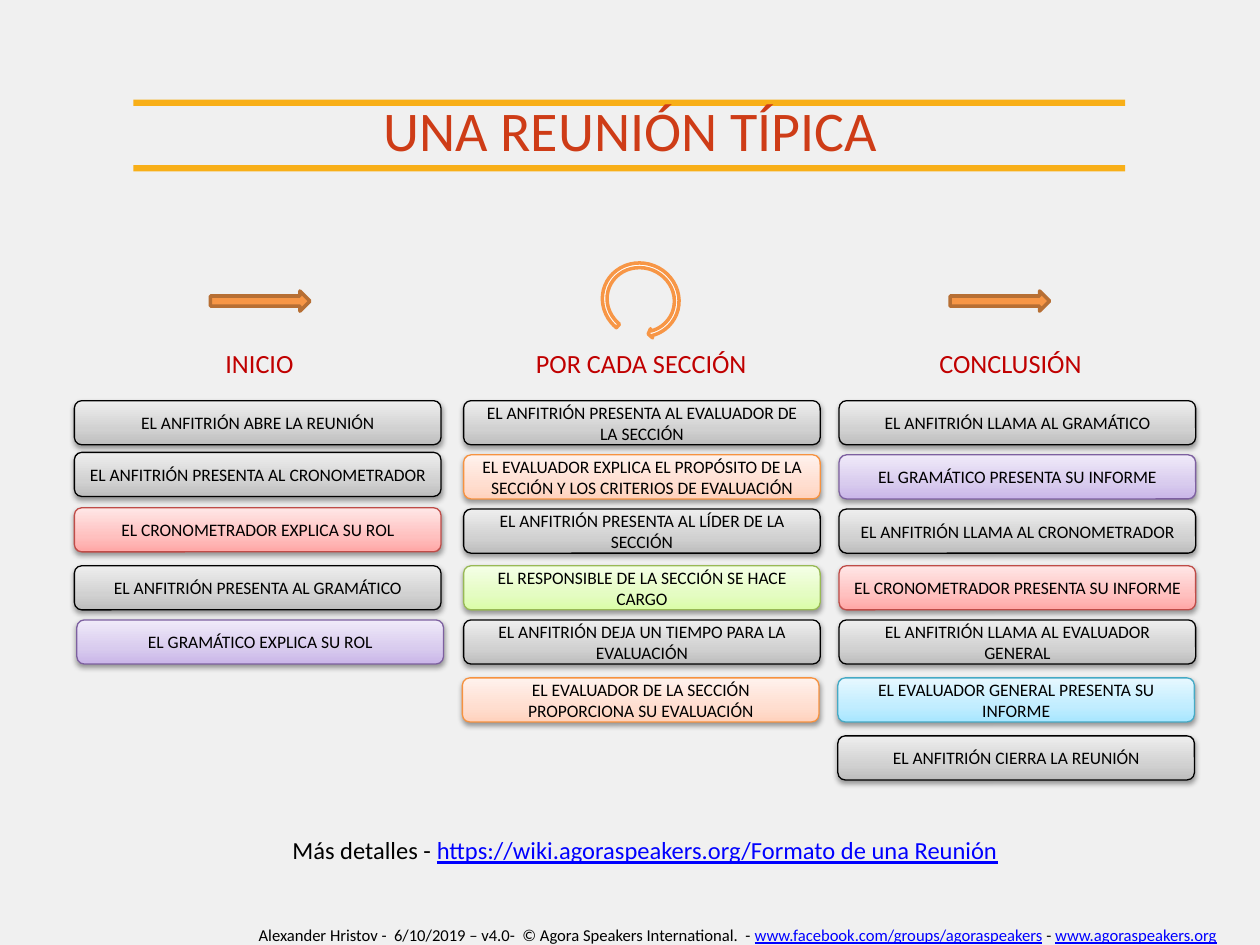
from pptx import Presentation
from pptx.dml.color import RGBColor
from pptx.enum.shapes import MSO_SHAPE as Shape
from pptx.enum.text import MSO_ANCHOR as Anchor, PP_ALIGN as Align
from pptx.oxml import parse_xml
from pptx.oxml.ns import nsdecls
from pptx.util import Inches, Pt

COLORS = {
    "background": "F0F0F0", "bar": "F8AF18", "title": "CE3C17",
    "heading": "C00000", "text": "000000", "link": "0000FF",
    "arrow": "F79646", "arrow_line": "B76F34", "loop": "FFFFFF",
}
# Role: outline, then gradient from bottom to top
ROLES = {
    "host": ("000000", "BDBDBD", "D1D1D1", "EEEEEE"),
    "timer": ("BF4C48", "FFA6A5", "FFC0BF", "FFE7E7"),
    "grammarian": ("7D60A0", "C9B5E8", "D8CBEE", "F0EAF9"),
    "evaluator": ("F69240", "FFD2BD", "FFDED0", "FFF2ED"),
    "leader": ("98B955", "DAFDA7", "E4FCC2", "F5FFE7"),
    "general": ("46AAC5", "A7E6FF", "C1EDFF", "E7F8FF"),
}
FONT = "Calibri"

presentation = Presentation()
presentation.slide_width = Inches(10)
presentation.slide_height = Inches(7.5)
slide = presentation.slides.add_slide(presentation.slide_layouts[6])
slide.background.fill.solid()
slide.background.fill.fore_color.rgb = RGBColor.from_string(COLORS["background"])


def add_text(left, top, width, height, size, color, text, anchor=Anchor.TOP):
    """Add a centred text box and return its paragraph."""
    box = slide.shapes.add_textbox(Inches(left), Inches(top), Inches(width), Inches(height))
    box.text_frame.word_wrap = True
    box.text_frame.vertical_anchor = anchor
    paragraph = box.text_frame.paragraphs[0]
    paragraph.alignment = Align.CENTER
    paragraph.font.name = FONT
    paragraph.font.size = Pt(size)
    paragraph.font.color.rgb = RGBColor.from_string(COLORS[color])
    for index, part in enumerate(text):
        run = paragraph.add_run()
        run.text = part
        if index % 2:  # every second part is a web address
            run.font.underline = True
            run.font.color.rgb = RGBColor.from_string(COLORS["link"])


def add_shape(kind, left, top, width, height, fill=None, line=None, line_width=0.75):
    shape = slide.shapes.add_shape(kind, Inches(left), Inches(top), Inches(width), Inches(height))
    shape.shadow.inherit = False
    if fill:
        shape.fill.solid()
        shape.fill.fore_color.rgb = RGBColor.from_string(fill)
    if line:
        shape.line.color.rgb = RGBColor.from_string(line)
        shape.line.width = Pt(line_width)
    else:
        shape.line.fill.background()
    return shape


# Title between two bars
for top in (0.79, 1.31):
    add_shape(Shape.RECTANGLE, 1.06, top, 7.87, 0.05, COLORS["bar"])
add_text(0.01, 0.71, 9.99, 0.6, 32, "title", ["UNA REUNIÓN TÍPICA"])

# Columns: heading, heading left, box left, box width, row tops, nudges by row, steps
ROW_TOPS = [3.18, 3.61, 4.04, 4.49, 4.92, 5.38, 5.84]
COLUMNS = [
    ("INICIO", 0.61, 0.59, 2.91, [3.18, 3.59, 4.03, 4.49, 4.92], {4: 0.02}, [
        ("host", "EL ANFITRIÓN ABRE LA REUNIÓN"),
        ("host", "EL ANFITRIÓN PRESENTA AL CRONOMETRADOR"),
        ("timer", "EL CRONOMETRADOR EXPLICA SU ROL"),
        ("host", "EL ANFITRIÓN PRESENTA AL GRAMÁTICO"),
        ("grammarian", "EL GRAMÁTICO EXPLICA SU ROL"),
    ]),
    ("POR CADA SECCIÓN", 3.64, 3.68, 2.83, ROW_TOPS, {5: -0.01}, [
        ("host", "EL ANFITRIÓN PRESENTA AL EVALUADOR DE LA SECCIÓN"),
        ("evaluator", "EL EVALUADOR EXPLICA EL PROPÓSITO DE LA SECCIÓN Y LOS CRITERIOS DE EVALUACIÓN"),
        ("host", "EL ANFITRIÓN PRESENTA AL LÍDER DE LA SECCIÓN"),
        ("leader", "EL RESPONSIBLE DE LA SECCIÓN SE HACE CARGO"),
        ("host", "EL ANFITRIÓN DEJA UN TIEMPO PARA LA EVALUACIÓN"),
        ("evaluator", "EL EVALUADOR DE LA SECCIÓN PROPORCIONA SU EVALUACIÓN"),
    ]),
    ("CONCLUSIÓN", 6.57, 6.66, 2.83, ROW_TOPS, {5: -0.01, 6: -0.01}, [
        ("host", "EL ANFITRIÓN LLAMA AL GRAMÁTICO"),
        ("grammarian", "EL GRAMÁTICO PRESENTA SU INFORME"),
        ("host", "EL ANFITRIÓN LLAMA AL CRONOMETRADOR"),
        ("timer", "EL CRONOMETRADOR PRESENTA SU INFORME"),
        ("host", "EL ANFITRIÓN LLAMA AL EVALUADOR GENERAL"),
        ("general", "EL EVALUADOR GENERAL PRESENTA SU INFORME"),
        ("host", "EL ANFITRIÓN CIERRA LA REUNIÓN"),
    ]),
]
for heading, heading_left, left, width, tops, nudges, steps in COLUMNS:
    add_text(heading_left, 2.71, 2.9, 0.35, 15, "heading", [heading])
    for row, (role, text) in enumerate(steps):
        outline, *stops = ROLES[role]
        box = add_shape(Shape.ROUNDED_RECTANGLE, left + nudges.get(row, 0), tops[row],
                        width, 0.35, line=outline)
        # Three-stop gradient and soft shadow
        box.fill.gradient()
        box.fill.gradient_angle = 90
        stop_list = box.fill.gradient_stops[0]._gs.getparent()
        for old_stop in list(stop_list):
            stop_list.remove(old_stop)
        for position, color in zip((0, 35, 100), stops):
            stop_list.append(parse_xml(
                f'<a:gs {nsdecls("a")} pos="{position * 1000}"><a:srgbClr val="{color}"/></a:gs>'))
        effects = box._element.spPr.find("{*}effectLst")
        effects.append(parse_xml(
            f'<a:outerShdw {nsdecls("a")} blurRad="{Pt(3.1)}" dist="{Pt(1.6)}" dir="5400000" '
            'rotWithShape="0"><a:srgbClr val="000000"><a:alpha val="38000"/></a:srgbClr>'
            '</a:outerShdw>'))
        box.text_frame.vertical_anchor = Anchor.MIDDLE
        paragraph = box.text_frame.paragraphs[0]
        paragraph.text = text
        paragraph.alignment = Align.CENTER
        paragraph.font.name = FONT
        paragraph.font.size = Pt(10)
        paragraph.font.color.rgb = RGBColor.from_string(COLORS["text"])

# Loop and arrows above the headings
loop = add_shape(Shape.CIRCULAR_ARROW, 4.76, 2.07, 0.65, 0.62, COLORS["loop"], COLORS["arrow"], 2)
loop.rotation = 201.8
for index, value in enumerate((0.06, 3.31, 138.15, 173.62, 0.06)):
    loop.adjustments[index] = value
for left in (1.67, 7.54):
    add_shape(Shape.RIGHT_ARROW, left, 2.31, 0.79, 0.16, COLORS["arrow"], COLORS["arrow_line"], 2)

# Details and footer
add_text(1.22, 6.58, 7.8, 0.57, 14, "text",
         ["Más detalles - ", "https://wiki.agoraspeakers.org/Formato de una Reunión"])
add_text(1.64, 7.29, 8.43, 0.26, 9.5, "text",
         ["Alexander Hristov -  6/10/2019 – v4.0-  © Agora Speakers International.  - ",
          "www.facebook.com/groups/agoraspeakers", " - ", "www.agoraspeakers.org"])

presentation.save("out.pptx")
